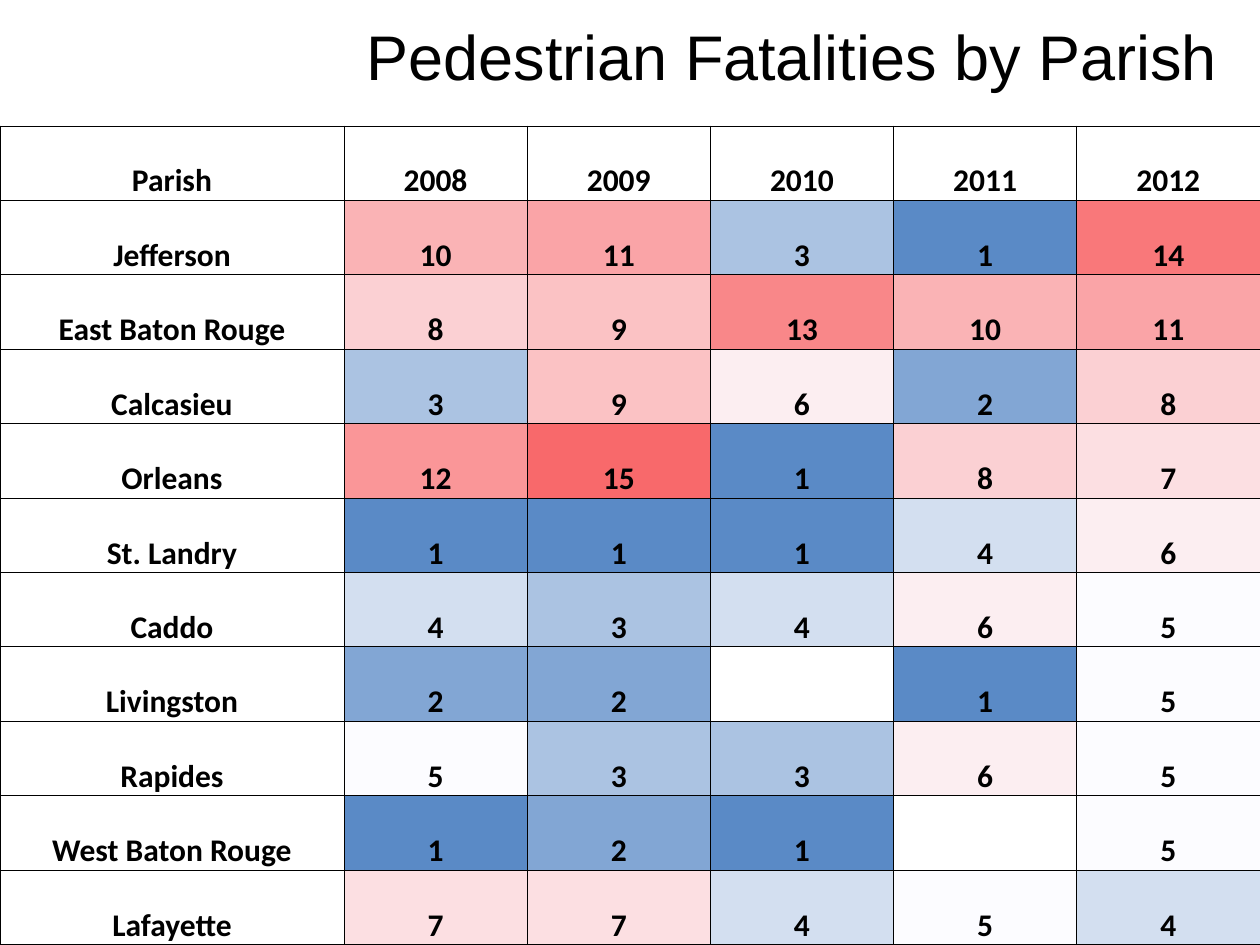
from lxml import etree
from pptx import Presentation
from pptx import util as u
from pptx.dml.color import RGBColor
from pptx.enum import text
from pptx.oxml.ns import qn

PX = 914400 / 126
SLIDE_W, SLIDE_H = 1260, 945

COLORS = {"ink": "000000", "paper": "FFFFFF"}
HEAT = {
    1: "5A8AC6", 2: "82A6D4", 3: "ABC3E2", 4: "D3DFF0", 5: "FCFCFF",
    6: "FCEEF1", 7: "FCDFE2", 8: "FBD0D3", 9: "FBC2C4", 10: "FAB3B5",
    11: "FAA4A7", 12: "FA9698", 13: "F98789", 14: "F9787A", 15: "F8696B",
}

HEADER = ["Parish", "2008", "2009", "2010", "2011", "2012"]
FATALITIES = [
    ["Jefferson", 10, 11, 3, 1, 14],
    ["East Baton Rouge", 8, 9, 13, 10, 11],
    ["Calcasieu", 3, 9, 6, 2, 8],
    ["Orleans", 12, 15, 1, 8, 7],
    ["St. Landry", 1, 1, 1, 4, 6],
    ["Caddo", 4, 3, 4, 6, 5],
    ["Livingston", 2, 2, None, 1, 5],
    ["Rapides", 5, 3, 3, 6, 5],
    ["West Baton Rouge", 1, 2, 1, None, 5],
    ["Lafayette", 7, 7, 4, 5, 4],
]


def px(length):
    return u.Emu(round(length * PX))


def add_text(paragraph, words, font, size, bold=False):
    paragraph.alignment = text.PP_ALIGN.CENTER
    run = paragraph.add_run()
    run.text = words
    run.font.name = font
    run.font.size = u.Pt(size)
    run.font.bold = bold
    run.font.color.rgb = RGBColor.from_string(COLORS["ink"])


def add_borders(cell, width):
    """Rule all four sides; call before the fill, which must follow in the XML."""
    properties = cell._tc.get_or_add_tcPr()
    for side in ("lnL", "lnR", "lnT", "lnB"):
        line = etree.SubElement(properties, qn(f"a:{side}"), w=str(u.Pt(width)))
        fill = etree.SubElement(line, qn("a:solidFill"))
        etree.SubElement(fill, qn("a:srgbClr"), val=COLORS["ink"])


def place_title(slide, left, top, width, height):
    title = slide.shapes.title
    title.left, title.top = px(left), px(top)
    title.width, title.height = px(width), px(height)
    title.text_frame.vertical_anchor = text.MSO_ANCHOR.MIDDLE
    add_text(title.text_frame.paragraphs[0], "Pedestrian Fatalities by Parish", "Arial", 36)


def fill_cell(cell, value):
    cell.margin_left = cell.margin_right = cell.margin_top = cell.margin_bottom = 0
    cell.vertical_anchor = text.MSO_ANCHOR.BOTTOM
    add_borders(cell, 0.5)
    cell.fill.solid()
    cell.fill.fore_color.rgb = RGBColor.from_string(HEAT.get(value, COLORS["paper"]))
    if value is not None:
        add_text(cell.text_frame.paragraphs[0], str(value), "Calibri", 18, bold=True)


def place_heat_table(slide, left, top, width, height, parish_width=344):
    rows = [HEADER] + FATALITIES
    table = slide.shapes.add_table(
        len(rows), len(HEADER), px(left), px(top), px(width), px(height)
    ).table
    table.first_row = table.horz_banding = False
    year_width = (width - parish_width) / (len(HEADER) - 1)
    for index, column in enumerate(table.columns):
        column.width = px(year_width if index else parish_width)
    for row, values in zip(table.rows, rows):
        row.height = px(height / len(rows))
        for cell, value in zip(row.cells, values):
            fill_cell(cell, value)


def main():
    deck = Presentation()
    deck.slide_width, deck.slide_height = px(SLIDE_W), px(SLIDE_H)
    slide = deck.slides.add_slide(deck.slide_layouts.get_by_name("Title Only"))
    place_title(slide, 346, 5, 892, 101)
    place_heat_table(slide, 0, 126, SLIDE_W, SLIDE_H - 126)
    deck.save("out.pptx")


if __name__ == "__main__":
    main()
